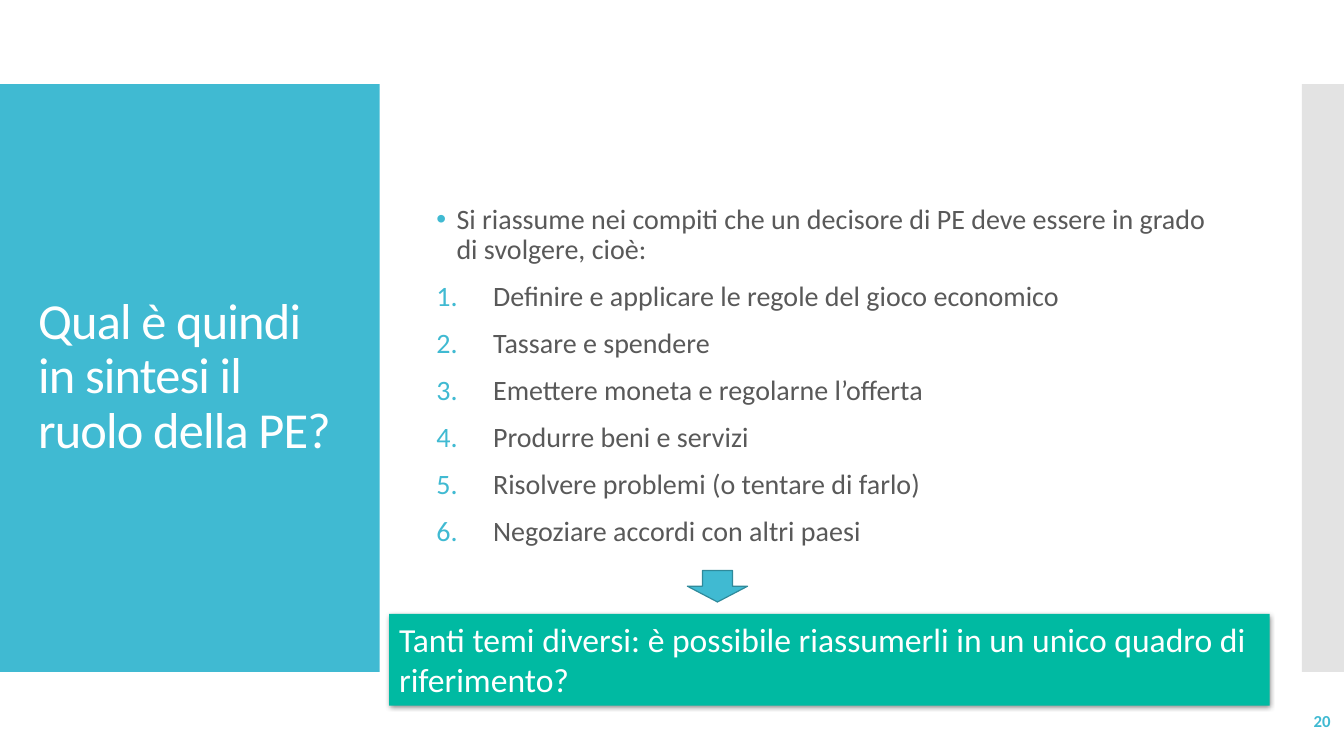
"""Build the slide that sums up the role of economic policy."""
from lxml.etree import SubElement
from pptx import Presentation
from pptx.dml.color import RGBColor
from pptx.enum.shapes import MSO_SHAPE
from pptx.enum.text import MSO_ANCHOR, MSO_AUTO_SIZE, PP_ALIGN
from pptx.oxml.ns import qn
from pptx.util import Pt

TITLE = "Qual è quindi in sintesi il ruolo della PE?"
INTRO = "Si riassume nei compiti che un decisore di PE deve essere in grado di svolgere, cioè:"
TASKS = [
    "Definire e applicare le regole del gioco economico",
    "Tassare e spendere",
    "Emettere moneta e regolarne l’offerta",
    "Produrre beni e servizi",
    "Risolvere problemi (o tentare di farlo)",
    "Negoziare accordi con altri paesi",
]
QUESTION = "Tanti temi diversi: è possibile riassumerli in un unico quadro di riferimento?"
PAGE_NUMBER = "20"

FONT = "Calibri"
CYAN, CYAN_DARK, GREEN = "40BAD2", "2F8A9B", "00BAA2"
GREY, TEXT, WHITE, BLACK = "C8C8C8", "595959", "FFFFFF", "000000"
PAGE_WIDTH, PAGE_HEIGHT = 960, 540
PANEL_TOP, PANEL_HEIGHT = 60, 420
TITLE_PANEL_WIDTH, EDGE_WIDTH = 271.25, 30


def color(value):
    return RGBColor.from_string(value)


def add_element(parent, tag, **attributes):
    return SubElement(parent, qn(tag), attributes)


def place(shape, left, top, width, height):
    shape.left, shape.top = Pt(left), Pt(top)
    shape.width, shape.height = Pt(width), Pt(height)


def add_block(page, kind, area, fill):
    block = page.shapes.add_shape(kind, *[Pt(length) for length in area])
    block.shadow.inherit = False
    block.fill.solid()
    block.fill.fore_color.rgb = color(fill)
    block.line.fill.background()
    return block


def prepare_frame(box, anchor=MSO_ANCHOR.MIDDLE):
    frame = box.text_frame
    frame.word_wrap = True
    frame.auto_size = MSO_AUTO_SIZE.NONE
    frame.vertical_anchor = anchor
    return frame


def write(para, text, size, fill, bold=False, align=PP_ALIGN.LEFT):
    para.alignment = align
    span = para.add_run()
    span.text = text
    span.font.name = FONT
    span.font.size = Pt(size)
    span.font.bold = bold
    span.font.color.rgb = color(fill)
    return span


def set_bullet(para, indent, tag, **attributes):
    properties = para._p.get_or_add_pPr()
    properties.set("marL", str(Pt(indent)))
    properties.set("indent", str(-Pt(indent)))
    bullet_color = add_element(properties, "a:buClr")
    add_element(bullet_color, "a:srgbClr", val=CYAN)
    add_element(properties, tag, **attributes)


def add_panels(page):
    areas = [
        (0, TITLE_PANEL_WIDTH, CYAN),
        (PAGE_WIDTH - EDGE_WIDTH, EDGE_WIDTH, GREY),
    ]
    for position, (left, width, fill) in enumerate(areas, start=2):
        area = (left, PANEL_TOP, width, PANEL_HEIGHT)
        panel = add_block(page, MSO_SHAPE.RECTANGLE, area, fill)
        page.shapes._spTree.insert(position, panel._element)
    shade = panel._element.spPr.find(qn("a:solidFill"))[0]
    add_element(shade, "a:alpha", val="50000")


def fill_title(box):
    place(box, 20, 88.5, 232, 362)
    para = prepare_frame(box).paragraphs[0]
    para.line_spacing = 0.9
    span = write(para, TITLE, 36, WHITE)
    span.font._element.set("spc", "-60")


def fill_body(box):
    place(box, 304.5, 67.5, 576, 403)
    frame = prepare_frame(box)
    for number, text in enumerate([INTRO, *TASKS]):
        para = frame.add_paragraph() if number else frame.paragraphs[0]
        para.line_spacing = 0.9
        para.space_before = Pt(12)
        write(para, text, 20, TEXT)
        if number:
            set_bullet(para, 40.5, "a:buAutoNum", type="arabicPeriod")
        else:
            set_bullet(para, 14.4, "a:buChar", char="•")


def add_arrow(page):
    arrow = add_block(page, MSO_SHAPE.DOWN_ARROW, (491, 407.5, 43, 22.5), CYAN)
    arrow.line.color.rgb = color(CYAN_DARK)
    arrow.line.width = Pt(0.85)


def add_question(page):
    box = add_block(page, MSO_SHAPE.RECTANGLE, (278, 438.5, 629, 65.5), GREEN)
    effects = box._element.spPr.find(qn("a:effectLst"))
    shadow = add_element(effects, "a:outerShdw", blurRad=str(Pt(3.5)),
                         dist=str(Pt(1.1)), dir="5400000", rotWithShape="0")
    shade = add_element(shadow, "a:srgbClr", val=BLACK)
    add_element(shade, "a:alpha", val="45000")
    frame = prepare_frame(box, MSO_ANCHOR.TOP)
    write(frame.paragraphs[0], QUESTION, 24, WHITE)


def add_page_number(page):
    box = page.shapes.add_textbox(Pt(837.5), Pt(500.5), Pt(120), Pt(29))
    para = prepare_frame(box).paragraphs[0]
    write(para, PAGE_NUMBER, 12, CYAN, bold=True, align=PP_ALIGN.RIGHT)


def main():
    deck = Presentation()
    deck.slide_width, deck.slide_height = Pt(PAGE_WIDTH), Pt(PAGE_HEIGHT)
    page = deck.slides.add_slide(deck.slide_layouts[1])
    add_panels(page)
    fill_title(page.shapes.title)
    fill_body(page.placeholders[1])
    add_arrow(page)
    add_question(page)
    add_page_number(page)
    deck.save("out.pptx")


if __name__ == "__main__":
    main()
